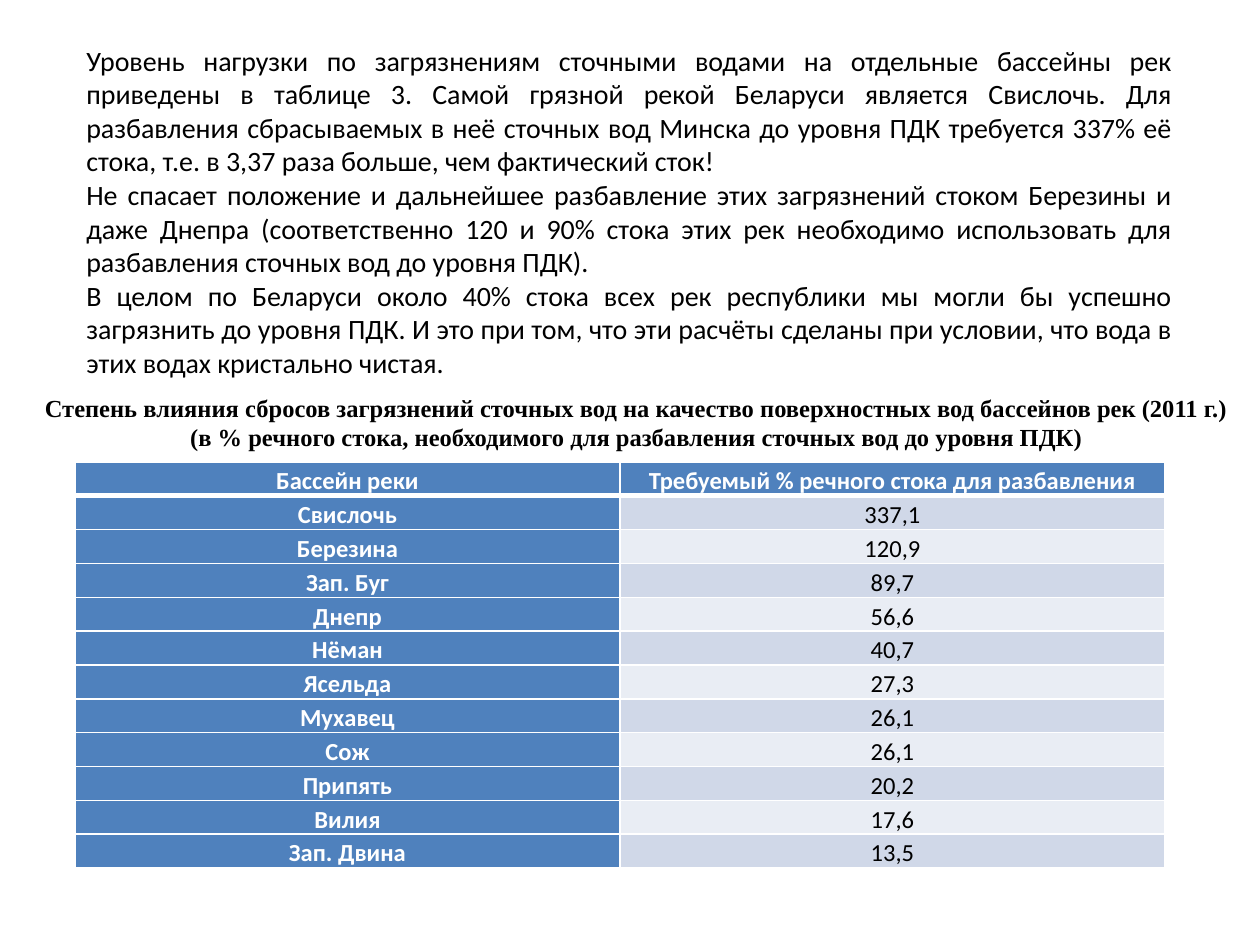
from dataclasses import dataclass

from lxml import etree
from pptx import Presentation
from pptx import util as u
from pptx.dml.color import RGBColor
from pptx.enum import text
from pptx.oxml import ns

PX = 914400 / 126  # EMU in one px


@dataclass(frozen=True)
class Theme:
    body_font: str = "Calibri"
    caption_font: str = "Times New Roman"
    body_size: int = 16
    table_size: int = 14
    black: str = "000000"
    white: str = "FFFFFF"
    accent: str = "4F81BD"
    bands: tuple = ("D0D8E8", "E9EDF4")


T = Theme()


def add_paragraph(tf, words, font, size, color, align, bold=False):
    """Fill the frame's first paragraph, or append one once that is taken."""
    p = tf.add_paragraph() if tf.text else tf.paragraphs[0]
    p.text = words
    p.alignment = align
    p.font.name, p.font.size, p.font.bold = font, u.Pt(size), bold
    p.font.color.rgb = RGBColor.from_string(color)
    return p


def set_borders(cell, **widths):
    """Draw white cell borders; schema order (lnL, lnR, lnT, lnB) puts them before the fill."""
    tc_pr = cell._tc.get_or_add_tcPr()
    for i, (side, pt) in enumerate(widths.items()):
        ln = etree.Element(ns.qn(f"a:{side}"), w=str(u.Pt(pt)))
        fill = etree.SubElement(ln, ns.qn("a:solidFill"))
        etree.SubElement(fill, ns.qn("a:srgbClr"), val=T.white)
        tc_pr.insert(i, ln)


prs = Presentation()
prs.slide_width, prs.slide_height = round(1260 * PX), round(945 * PX)
s = prs.slides.add_slide(prs.slide_layouts[6])

# Introduction
intro = [
    "Уровень нагрузки по загрязнениям сточными водами на отдельные бассейны рек приведены в таблице 3. "
    "Самой грязной рекой Беларуси является Свислочь. Для разбавления сбрасываемых в неё сточных вод Минска "
    "до уровня ПДК требуется 337% её стока, т.е. в 3,37 раза больше, чем фактический сток!",
    "Не спасает положение и дальнейшее разбавление этих загрязнений стоком Березины и даже Днепра "
    "(соответственно 120 и 90% стока этих рек необходимо использовать для разбавления сточных вод до уровня ПДК).",
    "В целом по Беларуси около 40% стока всех рек республики мы могли бы успешно загрязнить до уровня ПДК. "
    "И это при том, что эти расчёты сделаны при условии, что вода в этих водах кристально чистая.",
]
sp = s.shapes.add_textbox(*(round(v * PX) for v in (74, 37, 1111, 352)))
tf = sp.text_frame
tf.word_wrap = True
for words in intro:
    add_paragraph(tf, words, T.body_font, T.body_size, T.black, text.PP_ALIGN.JUSTIFY)

# Table of river basins
rows = [
    ("Бассейн реки", "Требуемый % речного стока для разбавления"),
    ("Свислочь", "337,1"),
    ("Березина", "120,9"),
    ("Зап. Буг", "89,7"),
    ("Днепр", "56,6"),
    ("Нёман", "40,7"),
    ("Ясельда", "27,3"),
    ("Мухавец", "26,1"),
    ("Сож", "26,1"),
    ("Припять", "20,2"),
    ("Вилия", "17,6"),
    ("Зап. Двина", "13,5"),
]
frame = s.shapes.add_table(len(rows), 2, *(round(v * PX) for v in (75, 462, 1090, 33 * len(rows))))
for r, row in enumerate(rows):
    for c, words in enumerate(row):
        cell = frame.table.cell(r, c)
        heading = r == 0 or c == 0
        cell.fill.solid()
        cell.fill.fore_color.rgb = RGBColor.from_string(T.accent if heading else T.bands[(r - 1) % 2])
        cell.vertical_anchor = text.MSO_ANCHOR.MIDDLE
        cell.margin_left = cell.margin_right = round(9 * PX)
        cell.margin_top = cell.margin_bottom = 0
        p = add_paragraph(cell.text_frame, words, T.body_font, T.table_size,
                          T.white if heading else T.black, text.PP_ALIGN.CENTER, heading)
        p.line_spacing = 1.15
        set_borders(cell, lnL=1, lnR=1, lnT=3 if r == 1 else 1, lnB=3 if r == 0 else 1)

# Table caption
caption = [
    "Степень влияния сбросов загрязнений сточных вод на качество поверхностных вод бассейнов рек (2011 г.)",
    "(в % речного стока, необходимого для разбавления сточных вод до уровня ПДК)",
]
sp = s.shapes.add_textbox(*(round(v * PX) for v in (-35, 386, 1281, 72)))
tf = sp.text_frame
tf.word_wrap = False
tf.vertical_anchor = text.MSO_ANCHOR.MIDDLE
for words in caption:
    p = add_paragraph(tf, words, T.caption_font, T.table_size, T.black, text.PP_ALIGN.CENTER, True)
    p._p.get_or_add_pPr().set("indent", str(round(62 * PX)))

prs.save("out.pptx")
